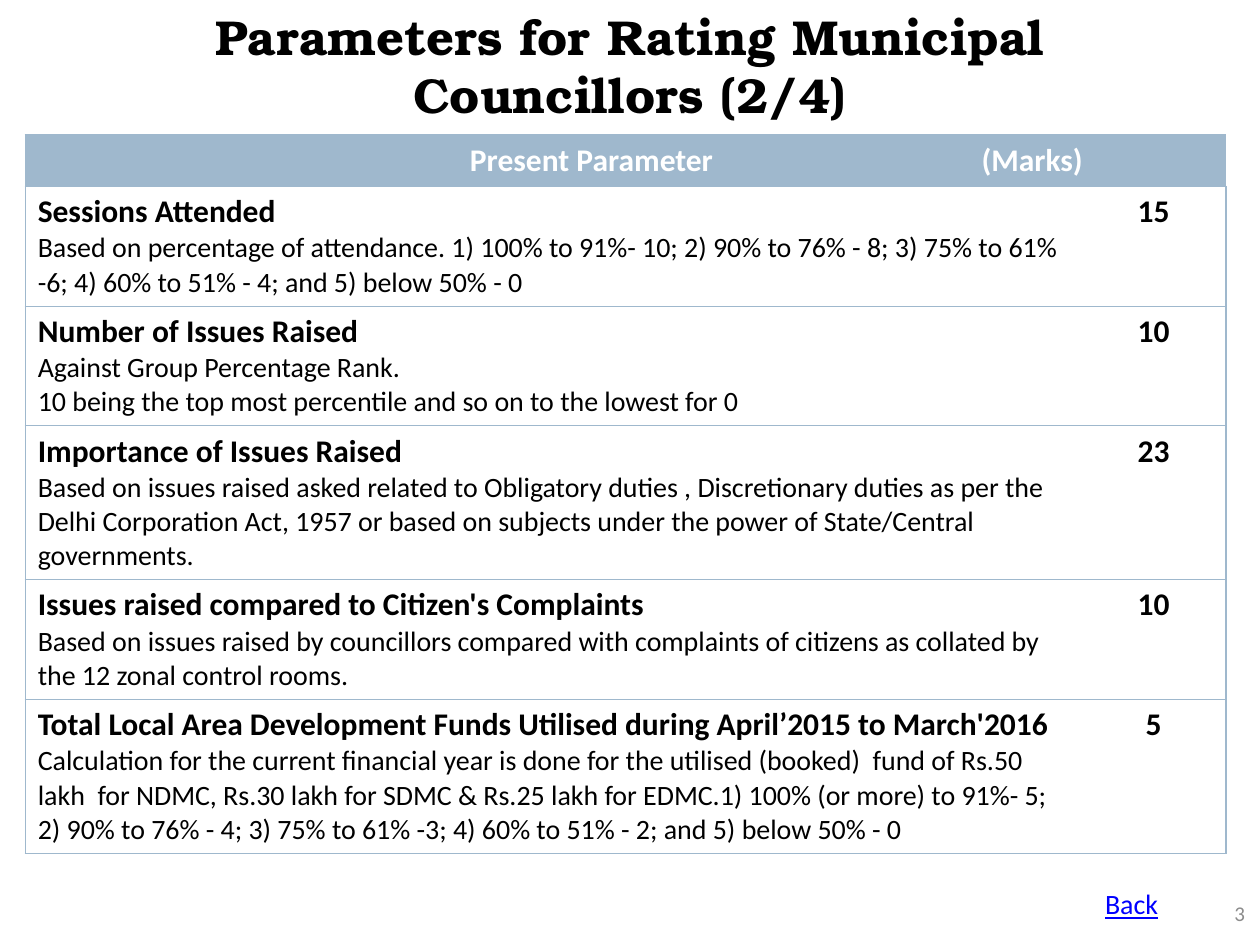
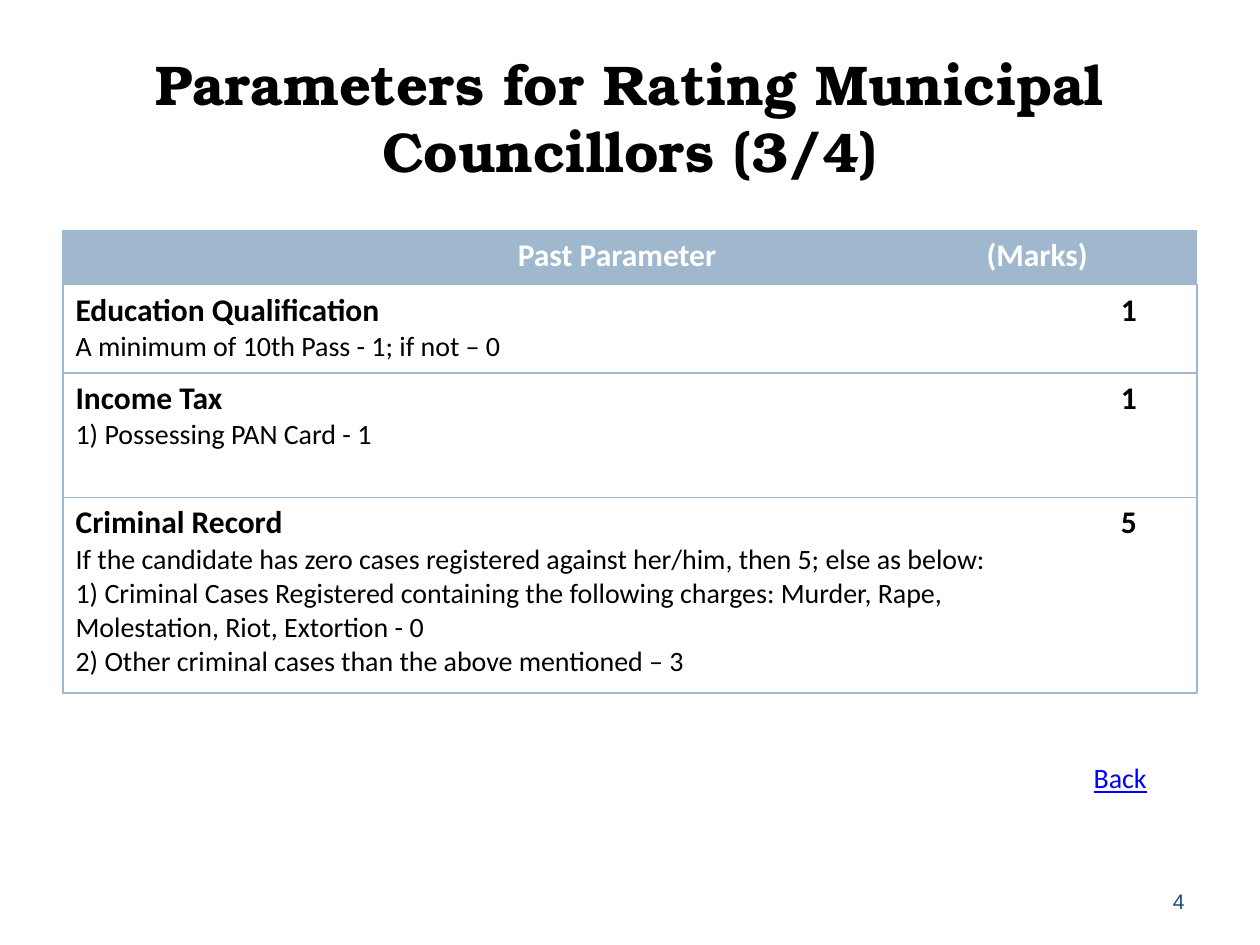
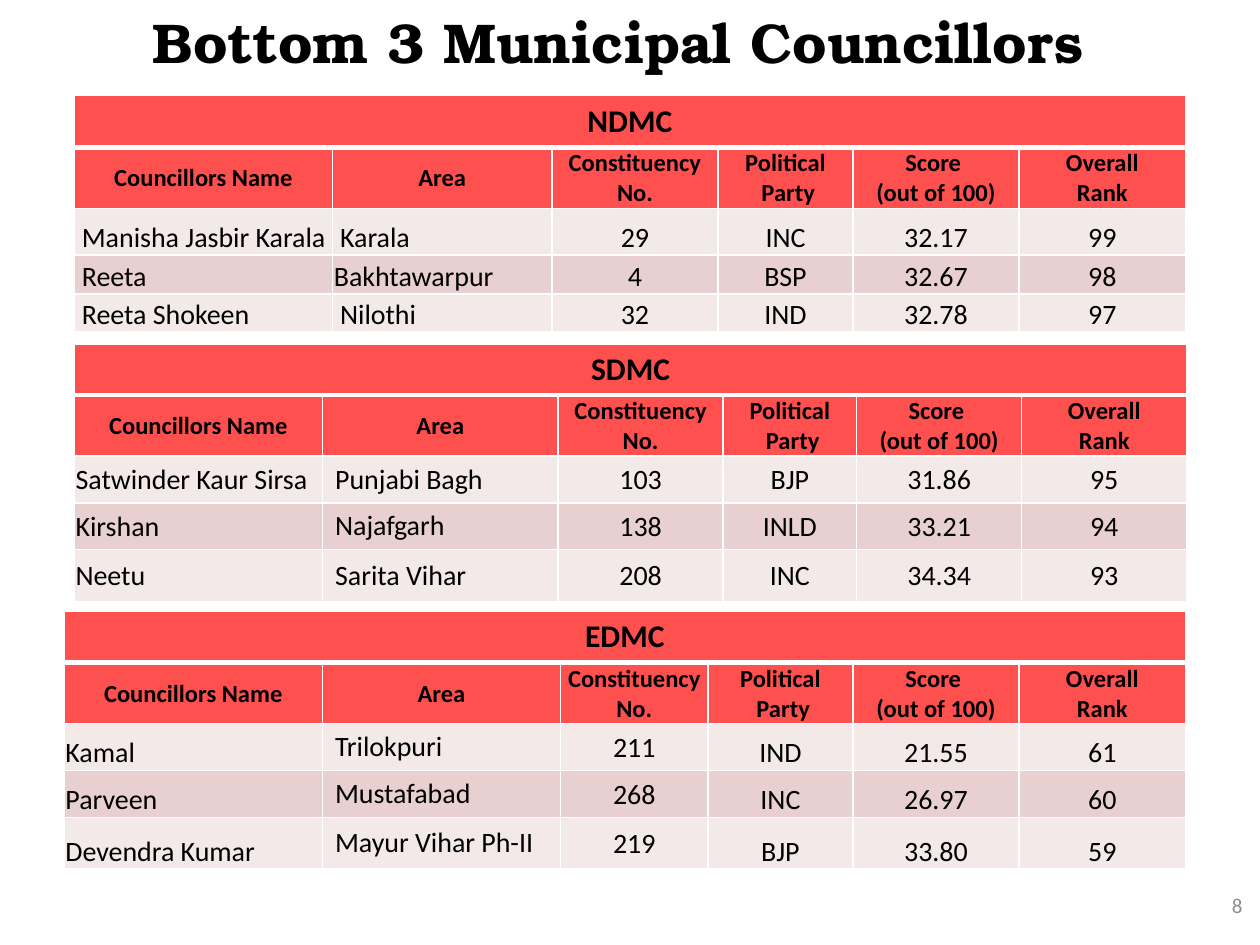
from lxml import etree
from pptx import Presentation
from pptx.dml.color import RGBColor
from pptx.enum.text import MSO_ANCHOR, MSO_AUTO_SIZE, PP_ALIGN
from pptx.oxml.ns import qn
from pptx.util import Inches, Pt

LEFT, CENTER, RIGHT = PP_ALIGN.LEFT, PP_ALIGN.CENTER, PP_ALIGN.RIGHT
TOP, MIDDLE, BOTTOM = MSO_ANCHOR.TOP, MSO_ANCHOR.MIDDLE, MSO_ANCHOR.BOTTOM
NO_FIT = MSO_AUTO_SIZE.NONE

BLACK = RGBColor(0x00, 0x00, 0x00)
WHITE = RGBColor(0xFF, 0xFF, 0xFF)
GRAY = RGBColor(0x8C, 0x8C, 0x8C)
NAVY = RGBColor(0x1F, 0x49, 0x7D)
LINK_BLUE = RGBColor(0x00, 0x00, 0xFF)
STEEL = RGBColor(0x9F, 0xB8, 0xCD)
RED = RGBColor(0xFF, 0x50, 0x50)
PALE_PINK = RGBColor(0xF4, 0xE9, 0xE9)
PINK = RGBColor(0xE8, 0xD0, 0xD0)

TITLE_FONT = "TeX Gyre Bonum"
BODY_FONT = "Calibri"
PLAIN_TABLE_STYLE = "{2D5ABB26-0587-4C30-8999-92F81FD0307C}"
NORMAL_INSETS = (0.1, 0.05, 0.1, 0.05)
TIGHT_INSETS = (0.01, 0.01, 0.01, 0)

PRESENT_ROWS = [
    ("Sessions Attended\nBased on percentage of attendance. 1) 100% to 91%- 10; "
     "2) 90% to 76% - 8; 3) 75% to 61% -6; 4) 60% to 51% - 4; and 5) below 50% - 0", "15"),
    ("Number of Issues Raised\nAgainst Group Percentage Rank.\n"
     "10 being the top most percentile and so on to the lowest for 0", "10"),
    ("Importance of Issues Raised\nBased on issues raised asked related to Obligatory duties , "
     "Discretionary duties as per the Delhi Corporation Act, 1957 or based on subjects under "
     "the power of State/Central governments.", "23"),
    ("Issues raised compared to Citizen's Complaints\nBased on issues raised by councillors "
     "compared with complaints of citizens as collated by the 12 zonal control rooms.", "10"),
    ("Total Local Area Development Funds Utilised during April’2015 to March'2016\n"
     "Calculation for the current financial year is done for the utilised (booked)  fund of "
     "Rs.50 lakh  for NDMC, Rs.30 lakh for SDMC & Rs.25 lakh for EDMC.1) 100% (or more) to "
     "91%- 5; 2) 90% to 76% - 4; 3) 75% to 61% -3; 4) 60% to 51% - 2; and 5) below 50% - 0", "5"),
]
PAST_ROWS = [
    ("Education Qualification\nA minimum of 10th Pass - 1; if not – 0", "1"),
    ("Income Tax\n1) Possessing PAN Card - 1", "1"),
    ("Criminal Record\nIf the candidate has zero cases registered against her/him, then 5; "
     "else as below:\n1) Criminal Cases Registered containing the following charges: Murder, "
     "Rape, Molestation, Riot, Extortion - 0\n2) Other criminal cases than the above "
     "mentioned – 3", "5"),
]
RANK_HEADS = ["Councillors Name", "Area", "Constituency No.", "Political\n Party",
              "Score \n(out of 100)", "Overall\nRank"]
NDMC_ROWS = [
    (" Manisha Jasbir Karala", " Karala", "29", "INC", "32.17", "99"),
    (" Reeta", "Bakhtawarpur", "4", "BSP", "32.67", "98"),
    (" Reeta Shokeen", " Nilothi", "32", "IND", "32.78", "97"),
]
SDMC_ROWS = [
    ("Satwinder Kaur Sirsa", "Punjabi Bagh", "103", "BJP", "31.86", "95"),
    ("Kirshan", "Najafgarh", "138", "INLD", "33.21", "94"),
    ("Neetu", "Sarita Vihar", "208", "INC", "34.34", "93"),
]
EDMC_ROWS = [
    ("Kamal", "Trilokpuri", "211", "IND", "21.55", "61"),
    ("Parveen", "Mustafabad", "268", "INC", "26.97", "60"),
    ("Devendra Kumar", "Mayur Vihar Ph-II", "219", "BJP", "33.80", "59"),
]


def style_para(para, size, color=BLACK, bold=False, align=LEFT, font=BODY_FONT, underline=None):
    para.alignment = align
    for span in para.runs:
        span.font.name = font
        span.font.size = Pt(size)
        span.font.bold = bold
        span.font.underline = underline
        span.font.color.rgb = color


def add_text(page, box, text, size, **style):
    shape = page.shapes.add_textbox(*map(Inches, box))
    frame = shape.text_frame
    frame.word_wrap = True
    frame.auto_size = NO_FIT
    frame.vertical_anchor = MIDDLE
    frame.text = text
    style_para(frame.paragraphs[0], size, **style)


def add_title(page, box, text, size):
    add_text(page, box, text, size, bold=True, align=CENTER, font=TITLE_FONT)


def add_page_number(page, left, top, number, color=GRAY, font=BODY_FONT):
    add_text(page, (left, top, 2.33, 0.4), number, 12, color=color, align=RIGHT, font=font)


def add_plain_table(page, left, top, widths, heights):
    box = map(Inches, (left, top, sum(widths), sum(heights)))
    table = page.shapes.add_table(len(heights), len(widths), *box).table
    table.first_row = table.horz_banding = False
    table._tbl.tblPr.find(qn("a:tableStyleId")).text = PLAIN_TABLE_STYLE
    for column, width in zip(table.columns, widths):
        column.width = Inches(width)
    for row, height in zip(table.rows, heights):
        row.height = Inches(height)
    return table


def set_borders(cell, color, **points):
    props = cell._tc.get_or_add_tcPr()
    for side in "LRTB":
        if side in points:
            line = etree.SubElement(props, qn(f"a:ln{side}"), w=str(Pt(points[side])))
            fill = etree.SubElement(line, qn("a:solidFill"))
            etree.SubElement(fill, qn("a:srgbClr"), val=str(color))


def fill_cell(cell, color):
    cell.fill.solid()
    cell.fill.fore_color.rgb = color


def set_cell(cell, text, size, insets=NORMAL_INSETS, anchor=TOP, **style):
    cell.margin_left, cell.margin_top, cell.margin_right, cell.margin_bottom = map(Inches, insets)
    cell.vertical_anchor = anchor
    cell.text_frame.text = text
    for para in cell.text_frame.paragraphs:
        style_para(para, size, **style)


def add_tab_stops(para, stops):
    tab_list = etree.SubElement(para._p.get_or_add_pPr(), qn("a:tabLst"))
    for stop in stops:
        etree.SubElement(tab_list, qn("a:tab"), pos=str(Inches(stop)), algn="l")


def add_parameter_table(page, left, top, widths, heights, heading, stops, rows):
    table = add_plain_table(page, left, top, widths, heights)
    for index in range(len(heights)):
        set_borders(table.cell(index, 0), STEEL, L=0.75, T=0.75, B=0.75)
        set_borders(table.cell(index, 1), STEEL, R=0.75, T=0.75, B=0.75)
    header = table.cell(0, 0)
    header.merge(table.cell(0, 1))
    fill_cell(header, STEEL)
    set_cell(header, f"\t{heading}\t(Marks)", 18, color=WHITE, bold=True)
    add_tab_stops(header.text_frame.paragraphs[0], stops)
    for index, (description, marks) in enumerate(rows, 1):
        cell = table.cell(index, 0)
        set_cell(cell, description, 16)
        style_para(cell.text_frame.paragraphs[0], 18, bold=True)
        set_cell(table.cell(index, 1), marks, 18, bold=True, align=CENTER)


def add_back_label(page, left, top, width):
    table = add_plain_table(page, left, top, [width], [0.37])
    set_cell(table.cell(0, 0), "Back", 16, color=LINK_BLUE, underline=True)


def add_rank_table(page, left, top, widths, heights, council, rows, anchors, area_insets):
    table = add_plain_table(page, left, top, widths, heights)
    fills = [RED, RED, PALE_PINK, PINK, PALE_PINK]
    for index, color in enumerate(fills):
        for column in range(len(widths)):
            cell = table.cell(index, column)
            set_borders(cell, WHITE, L=1, R=1, T=3 if index == 1 else 1, B=3 if index == 0 else 1)
            fill_cell(cell, color)
    banner = table.cell(0, 0)
    banner.merge(table.cell(0, len(widths) - 1))
    set_cell(banner, council, 18, bold=True, align=CENTER)
    for column, head in enumerate(RANK_HEADS):
        set_cell(table.cell(1, column), head, 14, TIGHT_INSETS, MIDDLE, bold=True, align=CENTER)
    for index, row in enumerate(rows, 2):
        for column, value in enumerate(row):
            insets = area_insets if column == 1 else TIGHT_INSETS
            align = LEFT if column < 2 else CENTER
            set_cell(table.cell(index, column), value, 16, insets, anchors[column], align=align)


def build_present_page(page):
    add_title(page, (0.5, -0.11, 9, 1.25), "Parameters for Rating Municipal Councillors (2/4)", 28)
    add_parameter_table(page, 0.2, 1.07, [8.38, 1.15], [0.41, 0.95, 0.95, 1.22, 0.95, 1.22],
                        "Present Parameter", (3.43, 7.49), PRESENT_ROWS)
    add_page_number(page, 7.65, 7.05, "3")
    add_back_label(page, 8.67, 7, 0.92)


def build_past_page(page):
    add_title(page, (0.5, 0.3, 9, 1.25), "Parameters for Rating Municipal Councillors (3/4)", 32)
    add_page_number(page, 7.17, 6.95, "4", NAVY, "Arial")
    add_parameter_table(page, 0.5, 1.83, [7.92, 1.08], [0.43, 0.7, 0.99, 1.55],
                        "Past Parameter", (3.51, 7.23), PAST_ROWS)
    add_back_label(page, 8.58, 6, 1.08)


def build_bottom_page(page):
    add_page_number(page, 7.63, 6.98, "8")
    add_title(page, (0.41, 0.13, 9, 0.39), "Bottom 3 Municipal Councillors", 32)
    add_rank_table(page, 0.59, 0.76, [2.05, 1.74, 1.32, 1.07, 1.32, 1.32],
                   [0.41, 0.48, 0.37, 0.31, 0.3], "NDMC", NDMC_ROWS,
                   [BOTTOM] * 6, TIGHT_INSETS)
    add_rank_table(page, 0.59, 2.73, [1.97, 1.87, 1.31, 1.06, 1.31, 1.31],
                   [0.39, 0.48, 0.37, 0.37, 0.41], "SDMC", SDMC_ROWS,
                   [MIDDLE] * 6, NORMAL_INSETS)
    add_rank_table(page, 0.51, 4.85, [2.05, 1.89, 1.17, 1.15, 1.32, 1.32],
                   [0.41, 0.48, 0.37, 0.37, 0.41], "EDMC", EDMC_ROWS,
                   [BOTTOM, MIDDLE, MIDDLE, BOTTOM, BOTTOM, BOTTOM], NORMAL_INSETS)


def main():
    deck = Presentation()
    deck.slide_width, deck.slide_height = Inches(10), Inches(7.5)
    for build in (build_present_page, build_past_page, build_bottom_page):
        build(deck.slides.add_slide(deck.slide_layouts[6]))
    deck.save("out.pptx")


if __name__ == "__main__":
    main()
